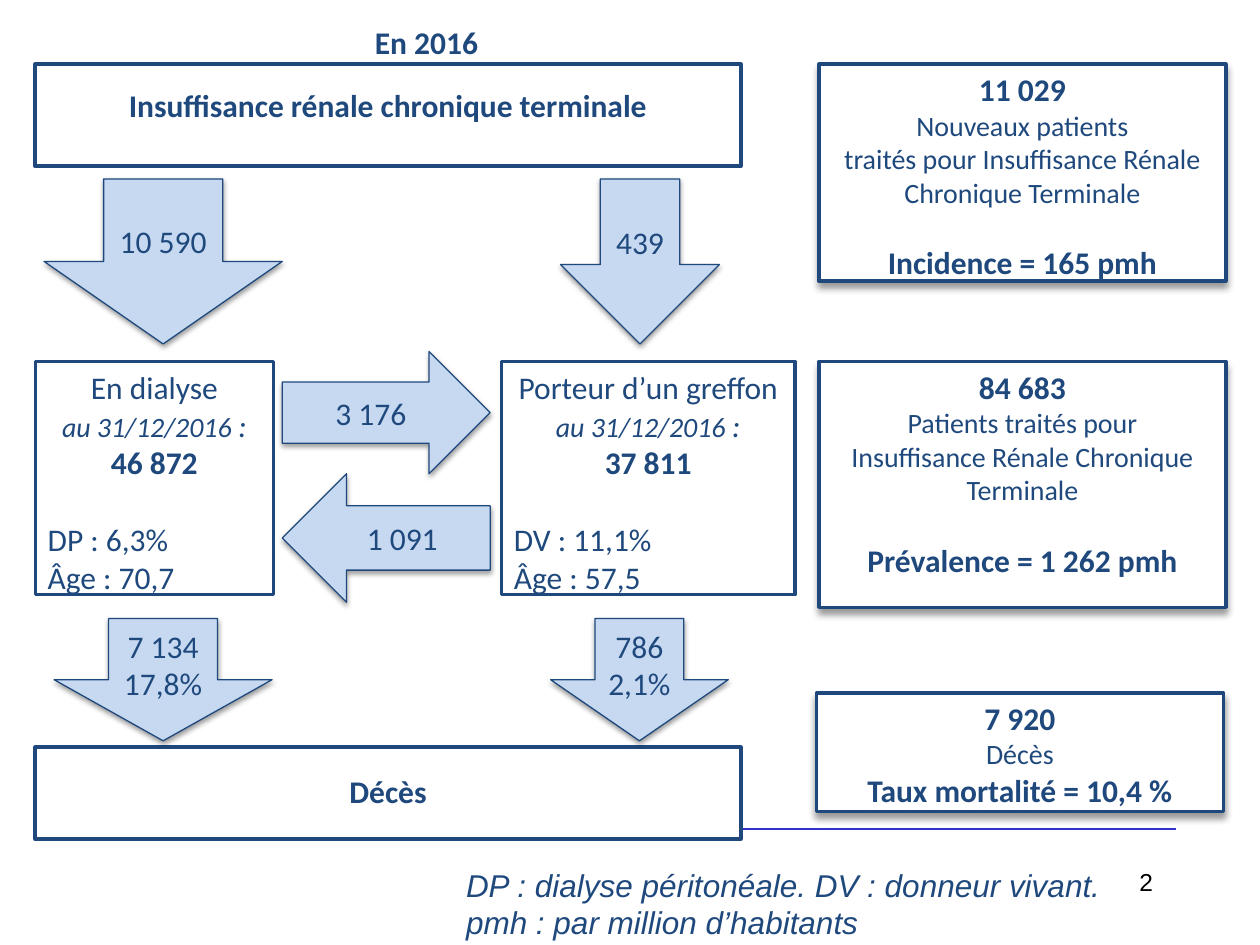
from dataclasses import dataclass
from typing import NamedTuple

from lxml.etree import SubElement
from pptx import Presentation
from pptx.dml.color import RGBColor
from pptx.enum.shapes import MSO_CONNECTOR, MSO_SHAPE as Shape
from pptx.enum.text import MSO_ANCHOR as Anchor, MSO_AUTO_SIZE as AutoSize, PP_ALIGN as Align
from pptx.oxml.ns import qn
from pptx.util import Inches, Pt


class Shadow(NamedTuple):
    opacity: int
    blur: float
    distance: float


@dataclass(frozen=True)
class Theme:
    navy: RGBColor = RGBColor(0x1F, 0x49, 0x7D)
    pale_blue: RGBColor = RGBColor(0xC6, 0xD9, 0xF1)
    white: RGBColor = RGBColor(0xFF, 0xFF, 0xFF)
    black: RGBColor = RGBColor(0, 0, 0)
    rule: RGBColor = RGBColor(0x33, 0x33, 0xCC)
    diagram_font: str = "Calibri"
    note_font: str = "Arial"
    large: int = 18
    medium: int = 16
    number: int = 14
    arrow_shadow: Shadow = Shadow(38, 3.1, 1.6)
    card_shadow: Shadow = Shadow(40, 4, 3)


THEME = Theme()


class Run(NamedTuple):
    text: str
    size: int = THEME.large
    bold: bool = False
    italic: bool = False
    color: RGBColor = THEME.navy
    font: str = THEME.diagram_font


class Line(NamedTuple):
    runs: tuple[Run, ...]
    align: Align = Align.CENTER
    space_before: float = 0


class Area(NamedTuple):
    left: float
    top: float
    width: float
    height: float

    def lengths(self) -> list:
        return [Inches(value) for value in self]


@dataclass(frozen=True)
class Box:
    area: Area
    lines: list[Line]
    shadow: Shadow | None = None
    inset_top: float = 0.05


@dataclass(frozen=True)
class Arrow:
    kind: Shape
    area: Area
    values: tuple[str, ...]


def strong(text: str, gap: float = 0) -> Line:
    return Line((Run(text, bold=True),), space_before=gap)


def plain(text: str, size: int = THEME.large) -> Line:
    return Line((Run(text, size),))


def left(text: str, gap: float = 0) -> Line:
    return Line((Run(text),), Align.LEFT, gap)


def treatment(name: str, count: str, detail: str, age: str) -> list[Line]:
    date = (Run("au 31/12/2016 ", THEME.medium, italic=True), Run(":", italic=True))
    return [plain(name), Line(date), strong(count), left(detail, 22), left(f"Âge : {age}")]


def summary(count: str, details: list[str], rate: str, gap: float = 19.5) -> list[Line]:
    return [strong(count), *(plain(text, THEME.medium) for text in details), strong(rate, gap)]


def write(shape, lines: list[Line], anchor=Anchor.TOP, wrap: bool = True) -> None:
    frame = shape.text_frame
    frame.word_wrap, frame.auto_size, frame.vertical_anchor = wrap, AutoSize.NONE, anchor
    for index, line in enumerate(lines):
        paragraph = frame.add_paragraph() if index else frame.paragraphs[0]
        paragraph.alignment = line.align
        if line.space_before:
            paragraph.space_before = Pt(line.space_before)
        for item in line.runs:
            run = paragraph.add_run()
            run.text = item.text
            run.font.name, run.font.size = item.font, Pt(item.size)
            run.font.bold, run.font.italic = item.bold, item.italic
            run.font.color.rgb = item.color


def draw_shape(slide, kind, area: Area, fill: RGBColor, line_width: float, shadow: Shadow | None):
    shape = slide.shapes.add_shape(kind, *area.lengths())
    shape.shadow.inherit = False
    shape.fill.solid()
    shape.fill.fore_color.rgb = fill
    shape.line.color.rgb = THEME.navy
    shape.line.width = Pt(line_width)
    if shadow:
        effects = shape.element.spPr.find(qn("a:effectLst"))
        outer = SubElement(effects, qn("a:outerShdw"), blurRad=str(Pt(shadow.blur)),
                           dist=str(Pt(shadow.distance)), dir="5400000", rotWithShape="0")
        color = SubElement(outer, qn("a:srgbClr"), val=str(THEME.black))
        SubElement(color, qn("a:alpha"), val=str(shadow.opacity * 1000))
    return shape


def draw_box(slide, box: Box) -> None:
    shape = draw_shape(slide, Shape.RECTANGLE, box.area, THEME.white, 2, box.shadow)
    shape.text_frame.margin_top = Inches(box.inset_top)
    write(shape, box.lines)


def draw_arrow(slide, arrow: Arrow) -> None:
    shape = draw_shape(slide, arrow.kind, arrow.area, THEME.pale_blue, 0.75, THEME.arrow_shadow)
    write(shape, [plain(value) for value in arrow.values], Anchor.MIDDLE)


def draw_rule(slide) -> None:
    rule = slide.shapes.add_connector(MSO_CONNECTOR.STRAIGHT, Inches(0.67), Inches(6.58),
                                      Inches(9.33), Inches(6.58))
    rule.line.color.rgb, rule.line.width = THEME.rule, Pt(1)
    SubElement(rule.element.spPr, qn("a:effectLst"))


def draw_footer(slide) -> None:
    number = slide.shapes.add_textbox(*Area(7.17, 6.83, 2.08, 0.5).lengths())
    number_run = Run("2", THEME.number, color=THEME.black, font=THEME.note_font)
    write(number, [Line((number_run,), Align.RIGHT)])
    note = slide.shapes.add_textbox(*Area(3.6, 6.82, 6.02, 0.71).lengths())
    texts = ("DP : dialyse péritonéale. DV : donneur vivant.", "pmh : par million d’habitants")
    write(note, [Line((Run(text, italic=True, font=THEME.note_font),), Align.LEFT)
                 for text in texts])


# Patient states on the left, key figures on the right
BOXES = [
    Box(Area(0.28, 0.51, 5.6, 0.81), [strong("Insuffisance rénale chronique terminale")],
        inset_top=0.17),
    Box(Area(0.28, 2.87, 1.89, 1.85), treatment("En dialyse", "46 872", "DP : 6,3%", "70,7")),
    Box(Area(3.98, 2.87, 2.33, 1.85),
        treatment("Porteur d’un greffon", "37 811", "DV : 11,1%", "57,5")),
    Box(Area(0.28, 5.93, 5.6, 0.73), [strong("Décès")], inset_top=0.2),
    Box(Area(6.5, 0.51, 3.23, 1.72),
        summary("11 029", ["Nouveaux patients",
                           "traités pour Insuffisance Rénale Chronique Terminale"],
                "Incidence = 165 pmh"), THEME.card_shadow),
    Box(Area(6.5, 2.87, 3.23, 1.95),
        summary("84 683", ["Patients traités pour", "Insuffisance Rénale Chronique", "Terminale"],
                "Prévalence = 1 262 pmh"), THEME.card_shadow),
    Box(Area(6.48, 5.5, 3.23, 0.94),
        summary("7 920", ["Décès"], "Taux mortalité = 10,4 %", 0), THEME.card_shadow),
]

# Flows between the states
ARROWS = [
    Arrow(Shape.RIGHT_ARROW, Area(2.24, 2.79, 1.65, 0.97), ("3 176",)),
    Arrow(Shape.LEFT_ARROW, Area(2.24, 3.76, 1.65, 1.02), ("1 091",)),
    Arrow(Shape.DOWN_ARROW, Area(4.45, 1.42, 1.26, 1.31), ("439",)),
    Arrow(Shape.DOWN_ARROW, Area(0.35, 1.42, 1.89, 1.31), ("10 590",)),
    Arrow(Shape.DOWN_ARROW, Area(4.37, 4.91, 1.41, 0.97), ("786", "2,1%")),
    Arrow(Shape.DOWN_ARROW, Area(0.43, 4.91, 1.73, 0.97), ("7 134", "17,8%")),
]


def main() -> None:
    presentation = Presentation()
    presentation.slide_width, presentation.slide_height = Inches(10), Inches(7.5)
    slide = presentation.slides.add_slide(presentation.slide_layouts[5])

    # Heading
    title = slide.shapes.title
    title.left, title.top, title.width, title.height = Area(2.87, 0.13, 1.03, 0.39).lengths()
    write(title, [strong("En 2016")], wrap=False)

    # Rule and footer, then the diagram over them
    draw_rule(slide)
    draw_footer(slide)
    for box in BOXES:
        draw_box(slide, box)
    for arrow in ARROWS:
        draw_arrow(slide, arrow)

    presentation.save("out.pptx")


if __name__ == "__main__":
    main()
